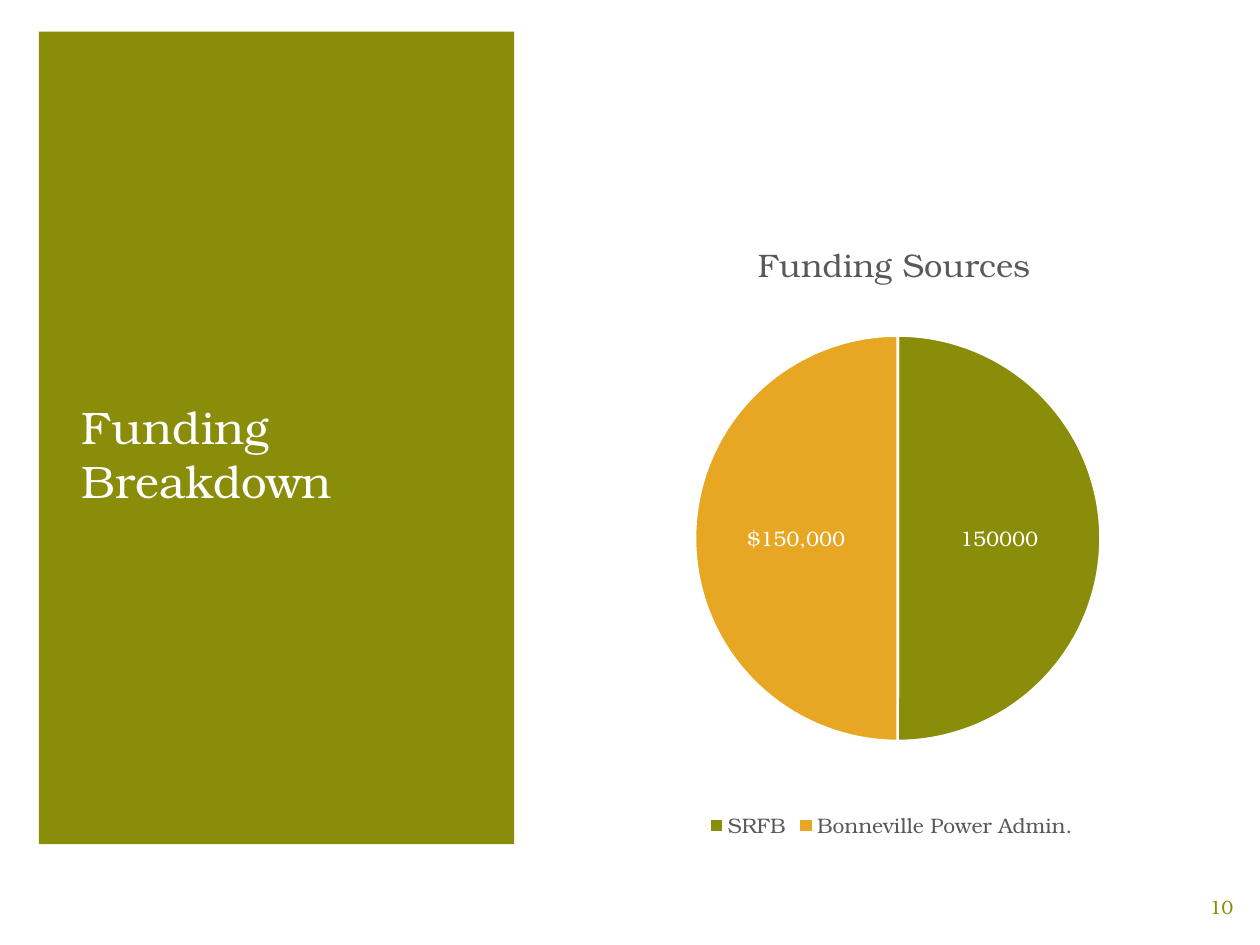
from lxml.etree import SubElement
from pptx import Presentation
from pptx.chart.data import CategoryChartData
from pptx.dml.color import RGBColor
from pptx.enum.chart import XL_CHART_TYPE, XL_LABEL_POSITION, XL_LEGEND_POSITION
from pptx.enum.shapes import MSO_SHAPE
from pptx.enum.text import MSO_ANCHOR, PP_ALIGN
from pptx.oxml.ns import qn
from pptx.util import Pt

FONT = "TeX Gyre Bonum"
COLORS = {"olive": "8A8D09", "gold": "E8A723", "grey": "595959", "white": "FFFFFF"}


def set_font(font, size, color):
    for name, value in {"name": FONT, "size": Pt(size), "bold": False}.items():
        setattr(font, name, value)
    font.color.rgb = RGBColor.from_string(COLORS[color])


def set_layout(parent, index, values):
    for old in parent.findall(qn("c:layout")):
        parent.remove(old)
    layout = SubElement(parent, qn("c:layout"))
    parent.insert(index, layout)
    manual = SubElement(layout, qn("c:manualLayout"))
    for tag, value in values.items():
        SubElement(manual, qn(f"c:{tag}")).set("val", str(value))


prs = Presentation()
prs.slide_width, prs.slide_height = Pt(720), Pt(540)
s = prs.slides.add_slide(prs.slide_layouts[5])

panel = s.shapes.add_shape(MSO_SHAPE.RECTANGLE, Pt(22.3), Pt(18), Pt(271.5), Pt(464.4))
panel.shadow.inherit = False
panel.fill.solid()
panel.fill.fore_color.rgb = RGBColor.from_string(COLORS["olive"])
panel.line.fill.background()

title = s.shapes.title
box = {"left": 39.6, "top": 202.3, "width": 247, "height": 91.5}
for name, value in box.items():
    setattr(title, name, Pt(value))
s.shapes._spTree.append(title._element)
tf = title.text_frame
tf.vertical_anchor = MSO_ANCHOR.BOTTOM
p = tf.paragraphs[0]
p.alignment = PP_ALIGN.LEFT
r = p.add_run()
r.text = "Funding Breakdown"
set_font(r.font, 26, "white")

data = CategoryChartData()
data.categories = ["SRFB", "Bonneville Power Admin."]
data.add_series("Series 1", [150000, 150000])
chart = s.shapes.add_chart(
    XL_CHART_TYPE.PIE, Pt(328.3), Pt(114.5), Pt(362.2), Pt(367.9), data
).chart
set_font(chart.font, 12, "grey")
chart.has_title = True
tf = chart.chart_title.text_frame
tf.text = "Funding Sources"
set_font(tf.paragraphs[0].runs[0].font, 18.6, "grey")
set_layout(chart.chart_title._element, 1,
           {"xMode": "edge", "yMode": "edge", "x": 0.28, "y": 0.05})
set_layout(chart._chartSpace.chart.plotArea, 0,
           {"layoutTarget": "inner", "xMode": "edge", "yMode": "edge",
            "x": 0.19, "y": 0.21, "w": 0.64, "h": 0.63})
chart.has_legend = True
chart.legend.position = XL_LEGEND_POSITION.BOTTOM
chart.legend.include_in_layout = False
set_font(chart.legend.font, 12, "grey")

plot = chart.plots[0]
plot.vary_by_categories = True
plot.has_data_labels = True
labels = plot.data_labels
labels.show_value = True
labels.show_percentage = False
labels.number_format = "General"
labels.number_format_is_linked = False
labels.position = XL_LABEL_POSITION.CENTER
set_font(labels.font, 12, "white")
for i, color in enumerate(["olive", "gold"]):
    point = plot.series[0].points[i]
    point.format.fill.solid()
    point.format.fill.fore_color.rgb = RGBColor.from_string(COLORS[color])
    point.format.line.color.rgb = RGBColor.from_string(COLORS["white"])
    point.format.line.width = Pt(1.5)
label = plot.series[0].points[1].data_label
label.text_frame.text = "$150,000"
set_font(label.text_frame.paragraphs[0].runs[0].font, 12, "white")
label.position = XL_LABEL_POSITION.CENTER
series_labels = plot.series[0].data_labels
series_labels.show_value = True
series_labels.show_percentage = False
series_labels.position = XL_LABEL_POSITION.CENTER
set_font(series_labels.font, 12, "white")

number = s.shapes.add_textbox(Pt(676), Pt(504), Pt(44), Pt(28.8))
tf = number.text_frame
tf.word_wrap = True
tf.vertical_anchor = MSO_ANCHOR.MIDDLE
p = tf.paragraphs[0]
p.alignment = PP_ALIGN.CENTER
r = p.add_run()
r.text = "10"
set_font(r.font, 11, "olive")

prs.save("out.pptx")
